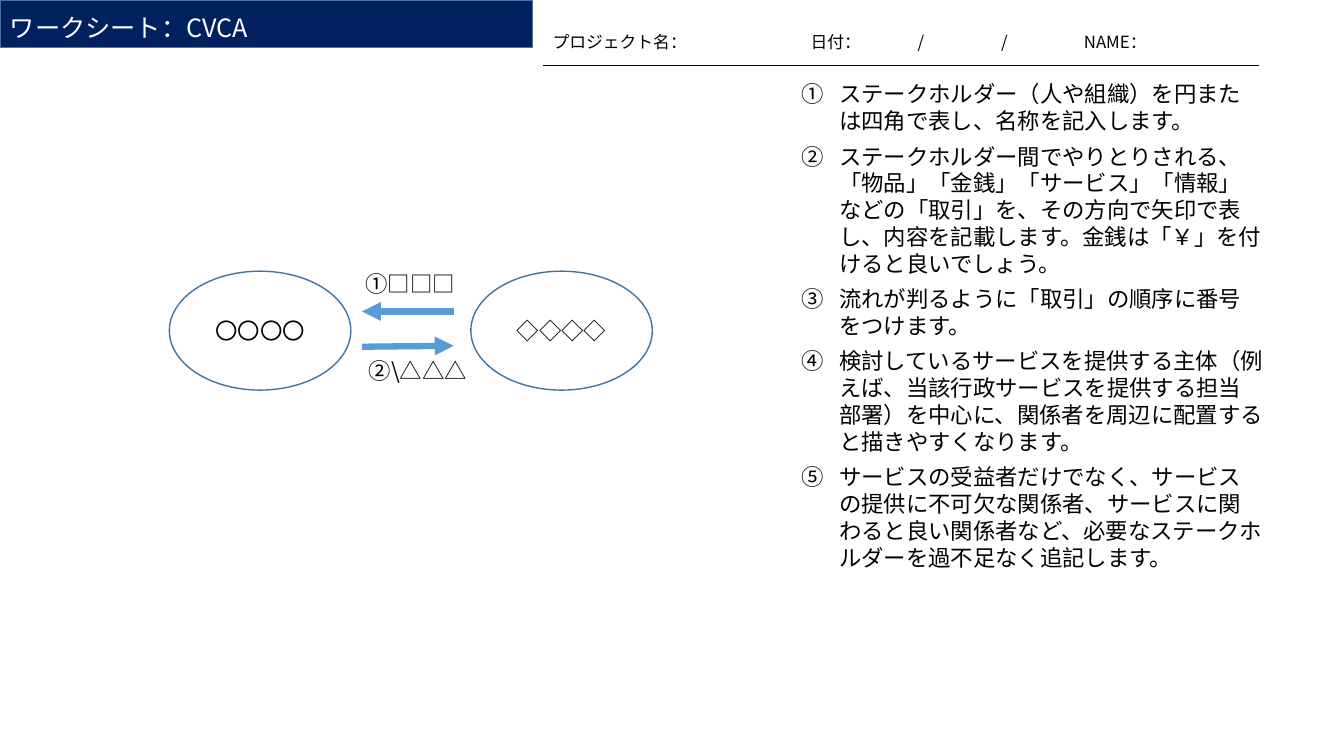
import pptx
import pptx.dml.color
import pptx.enum.shapes
import pptx.enum.text
import pptx.oxml.ns
import pptx.util
from lxml import etree

FONT = "Noto Sans CJK JP"
NAVY, OUTLINE, ARROW, WHITE, BLACK = "002060", "43739E", "5B9BD5", "FFFFFF", "000000"
LEFT, CENTER = pptx.enum.text.PP_ALIGN.LEFT, pptx.enum.text.PP_ALIGN.CENTER
MIDDLE = pptx.enum.text.MSO_ANCHOR.MIDDLE
SHAPES = pptx.enum.shapes.MSO_SHAPE

STEPS = [
    "ステークホルダー（人や組織）を円または四角で表し、名称を記入します。",
    "ステークホルダー間でやりとりされる、「物品」「金銭」「サービス」「情報」などの「取引」を、"
    "その方向で矢印で表し、内容を記載します。金銭は「￥」を付けると良いでしょう。",
    "流れが判るように「取引」の順序に番号をつけます。",
    "検討しているサービスを提供する主体（例えば、当該行政サービスを提供する担当部署）を中心に、"
    "関係者を周辺に配置すると描きやすくなります。",
    "サービスの受益者だけでなく、サービスの提供に不可欠な関係者、サービスに関わると良い関係者など、"
    "必要なステークホルダーを過不足なく追記します。",
]
HEADER_FIELDS = ["プロジェクト名：", "日付：", "/", "/", "NAME："]
HEADER_STOPS = [25.6, 36.2, 44.5, 52.7]


def grid(units):
    """Convert grid columns or rows, ten to the inch, to a length."""
    return pptx.util.Inches(units / 10)


def color(value):
    """Turn a hex string into a colour."""
    return pptx.dml.color.RGBColor.from_string(value)


def child(parent, tag, **attributes):
    """Append a drawing element with the given attributes."""
    element = etree.SubElement(parent, pptx.oxml.ns.qn(tag))
    for name, value in attributes.items():
        element.set(name, str(value))
    return element


def write(paragraph, text, size=16, fill=BLACK, align=LEFT, spacing=1.2, after=0):
    """Fill a paragraph with one formatted run."""
    paragraph.alignment = align
    if spacing:
        paragraph.line_spacing = pptx.util.Pt(round(size * spacing, 1))
    if after:
        paragraph.space_after = pptx.util.Pt(after)
    run = paragraph.add_run()
    run.text = text
    run.font.size = pptx.util.Pt(size)
    run.font.name = FONT
    run.font.color.rgb = color(fill)
    child(run.font._element, "a:ea", typeface=FONT)


class Worksheet:
    """Hold the presentation and draw elements on its slide."""

    def __init__(self):
        """Start a widescreen presentation with one blank slide."""
        self.presentation = pptx.Presentation()
        self.presentation.slide_width = pptx.util.Inches(13.33)
        self.presentation.slide_height = pptx.util.Inches(7.5)
        self.slide = self.presentation.slides.add_slide(self.presentation.slide_layouts[6])

    def shape(self, kind, box, text, fill=WHITE, top_inset=0.5, **style):
        """Draw an outlined shape with a line of text."""
        shape = self.slide.shapes.add_shape(kind, *map(grid, box))
        shape.shadow.inherit = False
        shape.fill.solid()
        shape.fill.fore_color.rgb = color(fill)
        shape.line.color.rgb = color(OUTLINE)
        shape.line.width = pptx.util.Pt(1)
        frame = shape.text_frame
        frame.word_wrap = True
        frame.vertical_anchor = MIDDLE
        frame.margin_top = grid(top_inset)
        write(frame.paragraphs[0], text, **style)

    def arrow(self, start, end):
        """Draw a thick arrow between two grid points."""
        points = map(grid, (*start, *end))
        connector = self.slide.shapes.add_connector(pptx.enum.shapes.MSO_CONNECTOR.STRAIGHT, *points)
        connector.line.color.rgb = color(ARROW)
        connector.line.width = pptx.util.Pt(4.5)
        child(connector.line._get_or_add_ln(), "a:tailEnd", type="triangle")
        child(connector._element.spPr, "a:effectLst")

    def text(self, box):
        """Add a wrapping text box and return its frame."""
        frame = self.slide.shapes.add_textbox(*map(grid, box)).text_frame
        frame.word_wrap = True
        return frame

    def label(self, box, text):
        """Add a centred one-line label."""
        write(self.text(box).paragraphs[0], text, align=CENTER)

    def numbered(self, box, items):
        """Add a list numbered with circled digits."""
        frame = self.text(box)
        for index, item in enumerate(items):
            paragraph = frame.add_paragraph() if index else frame.paragraphs[0]
            properties = paragraph._p.get_or_add_pPr()
            properties.set("marL", str(grid(3.75)))
            properties.set("indent", str(-grid(3.75)))
            child(properties, "a:buFont", typeface="+mj-ea")
            child(properties, "a:buAutoNum", type="circleNumDbPlain")
            write(paragraph, item, after=6)

    def header(self, box, fields, stops):
        """Add a one-cell table with tabbed fields over a rule."""
        table = self.slide.shapes.add_table(1, 1, *map(grid, box)).table
        table.first_row = table.horz_banding = False
        cell = table.cell(0, 0)
        properties = cell._tc.get_or_add_tcPr()
        for side, line_color in zip("LRTB", (WHITE, WHITE, WHITE, BLACK)):
            border = child(properties, f"a:ln{side}", w=pptx.util.Pt(1))
            child(child(border, "a:solidFill"), "a:srgbClr", val=line_color)
        cell.fill.background()
        paragraph = cell.text_frame.paragraphs[0]
        tabs = child(paragraph._p.get_or_add_pPr(), "a:tabLst")
        for stop in stops:
            child(tabs, "a:tab", pos=grid(stop), algn="l")
        write(paragraph, "\t".join(fields), size=12, spacing=None)


def main():
    """Build and save the worksheet."""
    sheet = Worksheet()
    sheet.shape(SHAPES.RECTANGLE, (0, 0, 52.8, 4.7), "ワークシート：CVCA",
                fill=NAVY, top_inset=1.2, size=18)
    sheet.slide.shapes[0].text_frame.paragraphs[0].runs[0].font.color.rgb = color(WHITE)
    for left, name in ((16.8, "〇〇〇〇"), (46.7, "◇◇◇◇")):
        sheet.shape(SHAPES.OVAL, (left, 26.9, 18, 11.8), name, align=CENTER)
    sheet.arrow((45, 30.9), (35.9, 30.9))
    sheet.arrow((35.9, 34.4), (45, 34.3))
    sheet.label((34.8, 26.3, 11.8, 3.7), "①□□□")
    sheet.label((34.5, 34.9, 13.9, 3.7), "②\\△△△")
    sheet.numbered((78.5, 7.5, 47.8, 46.7), STEPS)
    sheet.header((53.8, 2.4, 71.1, 4.1), HEADER_FIELDS, HEADER_STOPS)
    sheet.presentation.save("out.pptx")


if __name__ == "__main__":
    main()
